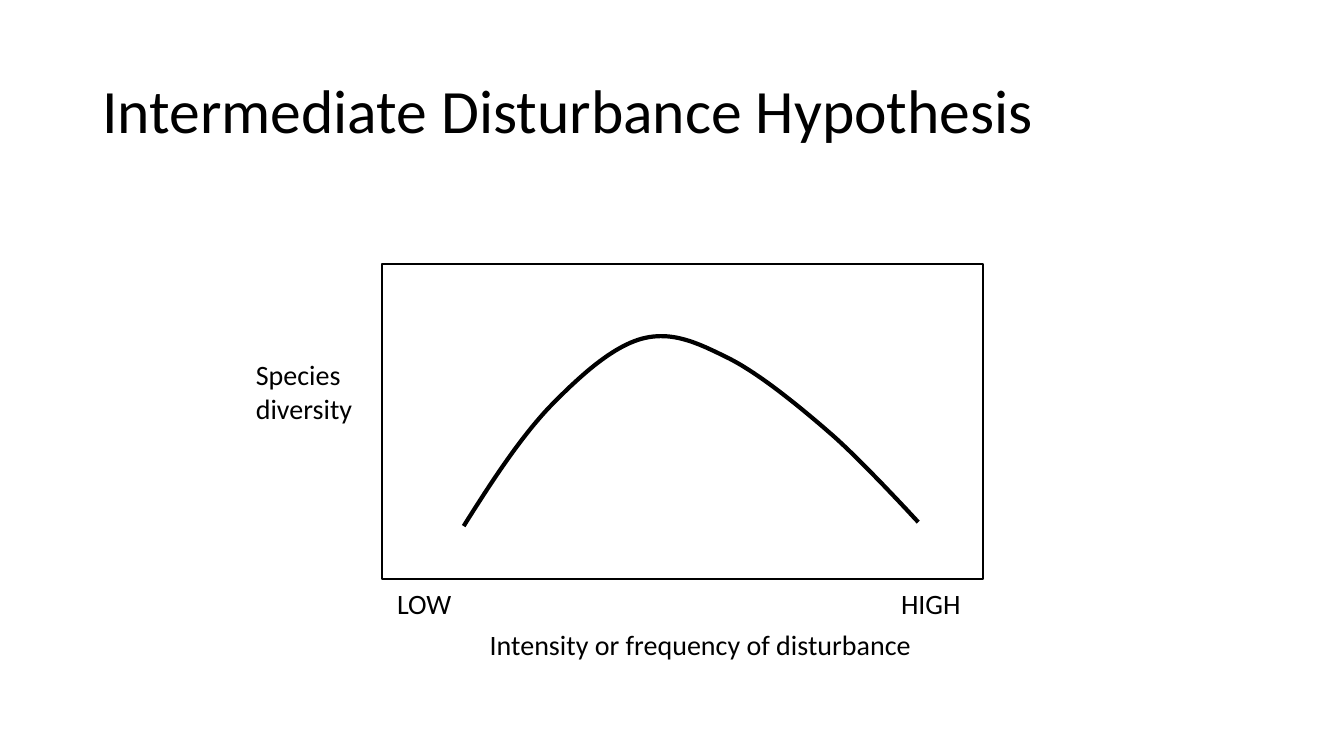
from lxml.etree import SubElement
from pptx import Presentation
from pptx.dml.color import RGBColor
from pptx.enum.shapes import MSO_SHAPE as Preset
from pptx.enum.text import MSO_ANCHOR as Anchor, MSO_AUTO_SIZE as AutoSize
from pptx.oxml.ns import qn
from pptx.util import Pt

BLACK, WHITE = "000000", "FFFFFF"


def color(value):
    return RGBColor.from_string(value)


def bezier_points(start, curves, steps=24):
    """Sample a chain of cubic curves, leaving out the start point."""
    points = []
    for first, second, end in curves:
        for step in range(1, steps + 1):
            t = step / steps
            u = 1 - t
            points.append(tuple(
                u**3 * a + 3 * u * u * t * b + 3 * u * t * t * c + t**3 * d
                for a, b, c, d in zip(start, first, second, end)))
        start = end
    return points


class DiagramSlide:
    font = "Calibri"
    ink = BLACK

    def __init__(self, presentation):
        self.slide = presentation.slides.add_slide(presentation.slide_layouts[6])

    def outline(self, shape, width):
        shape.shadow.inherit = False
        shape.line.color.rgb = color(self.ink)
        shape.line.width = Pt(width)

    def box(self, left, top, width, height, line_width):
        shape = self.slide.shapes.add_shape(
            Preset.RECTANGLE, Pt(left), Pt(top), Pt(width), Pt(height))
        shape.fill.solid()
        shape.fill.fore_color.rgb = color(WHITE)
        self.outline(shape, line_width)

    def curve(self, start, curves, line_width):
        builder = self.slide.shapes.build_freeform(Pt(start[0]), Pt(start[1]))
        points = [(Pt(x), Pt(y)) for x, y in bezier_points(start, curves)]
        builder.add_line_segments(points, close=False)
        shape = builder.convert_to_shape()
        shape.fill.background()
        self.outline(shape, line_width)

    def text(self, left, top, width, height, lines, size=20, wrap=False,
             anchor=Anchor.TOP, spacing=1.0, tab_stop=None):
        shape = self.slide.shapes.add_textbox(
            Pt(left), Pt(top), Pt(width), Pt(height))
        frame = shape.text_frame
        frame.word_wrap = wrap
        frame.auto_size = AutoSize.NONE if wrap else AutoSize.SHAPE_TO_FIT_TEXT
        frame.vertical_anchor = anchor
        for index, line in enumerate(lines):
            paragraph = frame.add_paragraph() if index else frame.paragraphs[0]
            paragraph.line_spacing = spacing
            if tab_stop:
                tabs = SubElement(paragraph._p.get_or_add_pPr(), qn("a:tabLst"))
                SubElement(tabs, qn("a:tab"), pos=str(Pt(tab_stop)), algn="l")
            run = paragraph.add_run()
            run.text = line
            run.font.name = self.font
            run.font.size = Pt(size)
            run.font.color.rgb = color(self.ink)


def main():
    presentation = Presentation()
    presentation.slide_width = Pt(960)
    presentation.slide_height = Pt(540)
    diagram = DiagramSlide(presentation)

    # Title
    diagram.text(66, 28.8, 828, 104.4, ["Intermediate Disturbance Hypothesis"],
                 size=44, wrap=True, anchor=Anchor.MIDDLE, spacing=0.9)

    # Plot frame and diversity curve
    diagram.box(273, 188.8, 429, 224.6, line_width=1.5)
    diagram.curve((331.2, 375.8), [
        ((350.6, 344.9), (370.8, 313.9), (391.7, 291.6)),
        ((413.3, 269.3), (437, 247.7), (458.6, 241.9)),
        ((480.2, 236.2), (498.2, 244.8), (521.3, 256.3)),
        ((543.6, 267.8), (571.7, 290.9), (594, 310.3)),
        ((616.3, 329.8), (655.9, 373), (655.9, 373)),
    ], line_width=3)

    # Axis labels
    diagram.text(342.7, 444.4, 318.2, 31.5,
                 ["Intensity or frequency of disturbance"])
    diagram.text(276.5, 415.6, 421.2, 31.5, ["LOW\tHIGH"], tab_stop=360)
    diagram.text(175.7, 252, 84.2, 55.4, ["Species", "diversity"])

    presentation.save("out.pptx")


if __name__ == "__main__":
    main()
